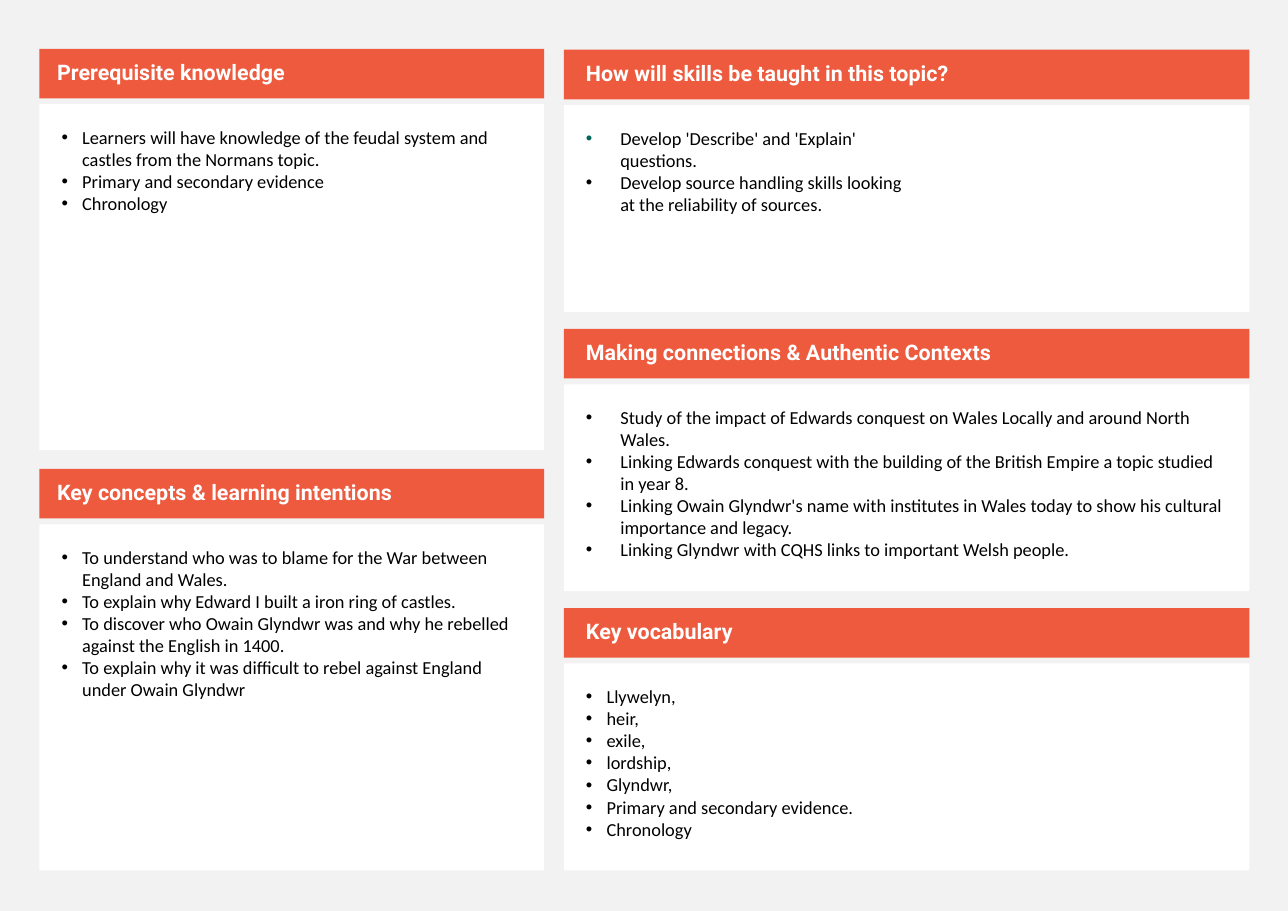
from dataclasses import dataclass

from lxml.etree import SubElement
from pptx import Presentation
from pptx.dml.color import RGBColor
from pptx.dml.fill import FillFormat
from pptx.enum.shapes import MSO_SHAPE
from pptx.enum.text import MSO_ANCHOR, PP_ALIGN
from pptx.oxml.ns import qn
from pptx.slide import Slide
from pptx.text.text import TextFrame, _Paragraph
from pptx.util import Pt

GREY, RED, WHITE, BLACK, GREEN = "F2F2F2", "ED5A3E", "FFFFFF", "000000", "00665A"
HEAD_H, BODY_DROP, PAD = 32.4, 36.2, 14.4


@dataclass(frozen=True)
class Column:
    left: float
    top: float
    width: float
    step: float
    body: float
    inset: float


@dataclass(frozen=True)
class Panel:
    title: str
    items: tuple[str, ...]
    indent: float = 13.5
    cols: int = 1
    first: str = BLACK


LEFT = Column(25.8, 31.9, 329.8, 274.6, 226.2, 11.5)
RIGHT = Column(368.5, 32.5, 447.9, 182.5, 135.2, PAD)

LAYOUT = {
    LEFT: (
        Panel("Prerequisite knowledge", (
            "Learners will have knowledge of the feudal system and castles from the Normans topic.",
            "Primary and secondary evidence",
            "Chronology",
        )),
        Panel("Key concepts & learning intentions", (
            "To understand who was to blame for the War between England and Wales.",
            "To explain why Edward I built a iron ring of castles.",
            "To discover who Owain Glyndwr was and why he rebelled against the English in 1400.",
            "To explain why it was difficult to rebel against England under Owain Glyndwr",
        )),
    ),
    RIGHT: (
        Panel("How will skills be taught in this topic?", (
            "Develop 'Describe' and 'Explain' questions.",
            "Develop source handling skills looking at the reliability of sources.",
        ), 22.5, 2, GREEN),
        Panel("Making connections & Authentic Contexts", (
            "Study of the impact of Edwards conquest on Wales Locally and around North Wales.",
            "Linking Edwards conquest with the building of the British Empire a topic studied in year 8.",
            "Linking Owain Glyndwr's name with institutes in Wales today to show his cultural importance and legacy.",
            "Linking Glyndwr with CQHS links to important Welsh people.",
        ), 22.5),
        Panel("Key vocabulary", (
            "Llywelyn,", "heir,", "exile,", "lordship,", "Glyndwr,",
            "Primary and secondary evidence.", "Chronology",
        )),
    ),
}


def paint(fill: FillFormat, tone: str) -> None:
    """Fill with one solid colour."""
    fill.solid()
    fill.fore_color.rgb = RGBColor.from_string(tone)


def add_box(slide: Slide, col: Column, top: float, height: float, tone: str,
            pads: tuple[float, float, float, float], anchor: MSO_ANCHOR) -> TextFrame:
    """Draw a plain box and return its text frame."""
    box = slide.shapes.add_shape(
        MSO_SHAPE.RECTANGLE, Pt(col.left), Pt(top), Pt(col.width), Pt(height))
    box.shadow.inherit = False
    box.line.fill.background()
    paint(box.fill, tone)
    frame = box.text_frame
    frame.word_wrap = True
    frame.vertical_anchor = anchor
    frame.margin_left, frame.margin_top, frame.margin_right, frame.margin_bottom = map(Pt, pads)
    return frame


def add_text(para: _Paragraph, text: str, font: str, size: float, tone: str, bold: bool) -> None:
    """Add one styled run to a left-aligned paragraph."""
    para.alignment = PP_ALIGN.LEFT
    run = para.add_run()
    run.text = text
    run.font.name, run.font.size, run.font.bold = font, Pt(size), bold
    paint(run.font.fill, tone)


def add_bullet(para: _Paragraph, indent: float, tone: str) -> None:
    """Give a paragraph a hanging round bullet."""
    props = para._p.get_or_add_pPr()
    props.set("marL", str(Pt(indent)))
    props.set("indent", str(-Pt(indent)))
    SubElement(SubElement(props, qn("a:buClr")), qn("a:srgbClr"), val=tone)
    SubElement(props, qn("a:buFont"), typeface="Arial")
    SubElement(props, qn("a:buChar"), char="•")


def add_panel(slide: Slide, col: Column, row: int, panel: Panel) -> None:
    """Draw a heading bar with its bulleted body."""
    top = col.top + row * col.step
    body = add_box(slide, col, top + BODY_DROP, col.body, WHITE, (PAD,) * 4, MSO_ANCHOR.TOP)
    if panel.cols > 1:
        body._txBody.bodyPr.set("numCol", str(panel.cols))
    for num, item in enumerate(panel.items):
        para = body.add_paragraph() if num else body.paragraphs[0]
        add_bullet(para, panel.indent, BLACK if num else panel.first)
        add_text(para, item, "Calibri", 12, BLACK, False)

    head = add_box(slide, col, top, HEAD_H, RED, (col.inset, 3.6, 7.2, 3.6), MSO_ANCHOR.MIDDLE)
    title = head.paragraphs[0]
    title.line_spacing, title.space_before = 0.9, Pt(11)
    add_text(title, panel.title, "Roboto", 14, WHITE, True)


def main() -> None:
    """Build the topic overview slide."""
    deck = Presentation()
    deck.slide_width, deck.slide_height = Pt(841.68), Pt(595.44)
    slide = deck.slides.add_slide(deck.slide_layouts[6])
    paint(slide.background.fill, GREY)
    for col, panels in LAYOUT.items():
        for row, panel in enumerate(panels):
            add_panel(slide, col, row, panel)
    deck.save("out.pptx")


if __name__ == "__main__":
    main()
